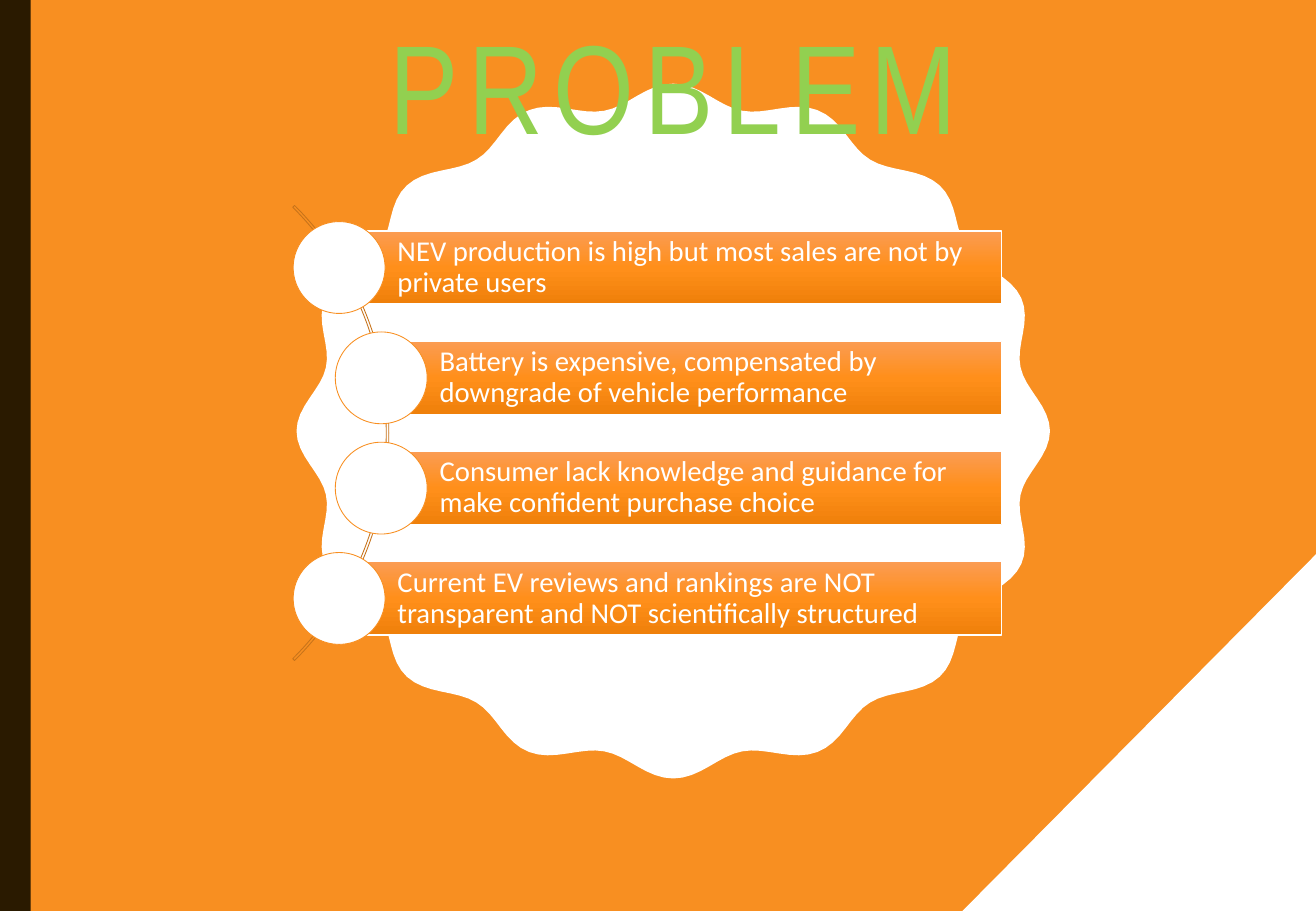
import copy
import math

import pptx
import pptx.dml.color
import pptx.enum.shapes
import pptx.enum.text
import pptx.oxml.ns
import pptx.util

Cm = pptx.util.Cm
Pt = pptx.util.Pt
SHAPES = pptx.enum.shapes.MSO_SHAPE
ALIGN = pptx.enum.text.PP_ALIGN
ANCHOR = pptx.enum.text.MSO_ANCHOR

WIDTH, HEIGHT = 27.51, 19.05
ORANGE, WHITE = "F88F21", "FFFFFF"
BAR_GRADIENT = ["FB9C53", "FF8F1A", "EF800A"]
PROBLEMS = [
    "NEV production is high but most sales are not by private users",
    "Battery is expensive, compensated by downgrade of vehicle performance",
    "Consumer lack knowledge and guidance for make confident purchase choice",
    "Current EV reviews and rankings are NOT transparent and NOT scientifically structured",
]


def color(hex_value):
    return pptx.dml.color.RGBColor.from_string(hex_value)


def style_shape(shape, fill=None, line=None, line_width=0.5):
    shape.shadow.inherit = False
    if fill:
        shape.fill.solid()
        shape.fill.fore_color.rgb = color(fill)
    else:
        shape.fill.background()
    if line:
        shape.line.color.rgb = color(line)
        shape.line.width = Pt(line_width)
    else:
        shape.line.fill.background()


def add_box(slide, kind, left, top, width, height, **style):
    shape = slide.shapes.add_shape(kind, Cm(left), Cm(top), Cm(width), Cm(height))
    style_shape(shape, **style)
    return shape


def fill_gradient(shape, hex_values):
    shape.fill.gradient()
    shape.fill.gradient_angle = 270
    stop_list = shape._element.spPr.find(".//" + pptx.oxml.ns.qn("a:gsLst"))
    while len(stop_list) < len(hex_values):
        stop_list.append(copy.deepcopy(stop_list[0]))
    for index, stop in enumerate(shape.fill.gradient_stops):
        stop.color.rgb = color(hex_values[index])
        stop.position = index / (len(hex_values) - 1)


def add_badge(slide, left, top, width, height, lobes=16, steps=256):
    points = []
    for step in range(steps):
        angle = 2 * math.pi * step / steps
        radius = 0.97 + 0.03 * math.cos(lobes * angle)
        x = left + width / 2 * (1 + radius * math.sin(angle))
        y = top + height / 2 * (1 - radius * math.cos(angle))
        points.append((Cm(x), Cm(y)))
    builder = slide.shapes.build_freeform(*points[0])
    builder.add_line_segments(points[1:], close=True)
    style_shape(builder.convert_to_shape(), fill=WHITE)


def add_title(slide, left, top, width, height):
    title = slide.shapes.title
    slide.shapes._spTree.append(title._element)
    title.left, title.top, title.width, title.height = map(Cm, (left, top, width, height))
    frame = title.text_frame
    frame.text = "PROBLEM"
    frame.auto_size = pptx.enum.text.MSO_AUTO_SIZE.NONE
    frame.vertical_anchor = ANCHOR.MIDDLE
    paragraph = frame.paragraphs[0]
    paragraph.alignment = ALIGN.CENTER
    paragraph.line_spacing = 0.9
    paragraph.font.size = Pt(75)
    paragraph.font.name = "Arial Narrow"
    paragraph.font.color.rgb = color("92D050")
    paragraph.runs[0].font._element.set("spc", "600")


def add_problem_bar(slide, text, left, top, width, height):
    bar = add_box(slide, SHAPES.RECTANGLE, left, top, width, height,
                  line=WHITE, line_width=0.75)
    fill_gradient(bar, BAR_GRADIENT)
    frame = bar.text_frame
    frame.word_wrap = True
    frame.vertical_anchor = ANCHOR.MIDDLE
    frame.margin_left = Cm(1.22)
    frame.margin_top = frame.margin_right = frame.margin_bottom = Cm(0.12)
    frame.text = text
    paragraph = frame.paragraphs[0]
    paragraph.alignment = ALIGN.LEFT
    paragraph.line_spacing = 0.9
    paragraph.font.size = Pt(17)
    paragraph.font.name = "Calibri"
    paragraph.font.color.rgb = color(WHITE)

    diameter = 1.92
    add_box(slide, SHAPES.OVAL, left - diameter / 2, top + (height - diameter) / 2,
            diameter, diameter, fill=WHITE, line=ORANGE)


def add_problem_list(slide, left, top, width, height):
    arc_size = 13.46
    arc = add_box(slide, SHAPES.BLOCK_ARC, left + 1.04 - arc_size,
                  top + (height - arc_size) / 2, arc_size, arc_size, line="C7731A")
    for index, value in enumerate((189, 27, 0.004)):
        arc.adjustments[index] = value

    bar_height = 1.53
    pitch = (height - bar_height) / (len(PROBLEMS) - 1)
    for row, text in enumerate(PROBLEMS):
        indent = 0 if row in (0, len(PROBLEMS) - 1) else 0.88
        add_problem_bar(slide, text, left + indent, top + row * pitch,
                        width - indent, bar_height)


def add_corner(slide, left, top, width, height):
    corner = add_box(slide, SHAPES.RIGHT_TRIANGLE, left, top, width, height, fill=WHITE)
    corner.rotation = 270


def build_problem_slide(presentation):
    slide = presentation.slides.add_slide(presentation.slide_layouts[5])
    slide.background.fill.solid()
    slide.background.fill.fore_color.rgb = color(ORANGE)
    add_badge(slide, 6.2, 1.75, 15.75, 14.53)
    add_box(slide, SHAPES.RECTANGLE, 0, 0, 0.64, HEIGHT, fill="2A1A00")
    add_title(slide, 2.44, 1.09, 23.29, 1.75)
    add_problem_list(slide, 7.09, 4.83, 13.85, 8.45)
    add_corner(slide, 20.02, 11.61, 7.54, 7.47)


def main():
    presentation = pptx.Presentation()
    presentation.slide_width = Cm(WIDTH)
    presentation.slide_height = Cm(HEIGHT)
    build_problem_slide(presentation)
    presentation.save("out.pptx")


if __name__ == "__main__":
    main()
